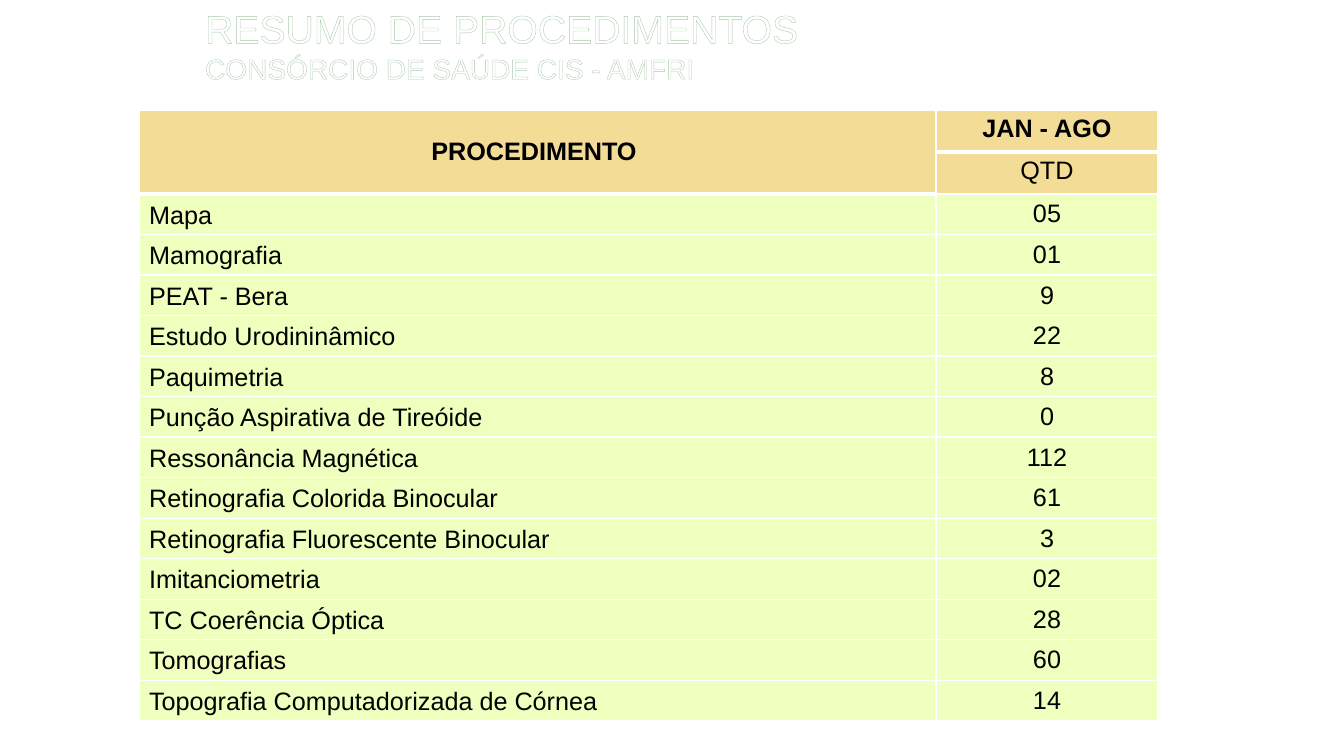
from dataclasses import dataclass

from pptx import Presentation
from pptx.dml.color import RGBColor
from pptx.enum.text import MSO_ANCHOR as Anchor, MSO_AUTO_SIZE as AutoSize, PP_ALIGN as Align
from pptx.oxml import parse_xml
from pptx.oxml.ns import nsdecls
from pptx.util import Emu, Pt

EMU_PER_PX = 914400 / 100.8


def px(length):
    return Emu(round(length * EMU_PER_PX))


@dataclass(frozen=True)
class Theme:
    font: str = "Arial"
    white: str = "FFFFFF"
    ink: str = "000000"
    title_outline: str = "AACAAA"
    header_fill: str = "F3DC96"
    body_fill: str = "EEFFBE"
    title_size: int = 28
    subtitle_size: int = 20
    table_size: int = 18
    outline_width: float = 0.8
    thin_border: int = 1
    thick_border: int = 3


PROCEDURES = [
    ("Mapa", "05"),
    ("Mamografia", "01"),
    ("PEAT - Bera", "9"),
    ("Estudo Urodininâmico", "22"),
    ("Paquimetria", "8"),
    ("Punção Aspirativa de Tireóide", "0"),
    ("Ressonância Magnética", "112"),
    ("Retinografia Colorida Binocular", "61"),
    ("Retinografia Fluorescente Binocular", "3"),
    ("Imitanciometria", "02"),
    ("TC Coerência Óptica", "28"),
    ("Tomografias", "60"),
    ("Topografia Computadorizada de Córnea", "14"),
]


class SlideBuilder:
    def __init__(self, page, theme):
        self.page = page
        self.theme = theme

    def line_xml(self, tag, color, width):
        return parse_xml(
            f'<a:{tag} {nsdecls("a")} w="{Pt(width)}"><a:solidFill>'
            f'<a:srgbClr val="{color}"/></a:solidFill></a:{tag}>'
        )

    def add_span(self, para, text, size, color, bold=False):
        span = para.add_run()
        span.text = text
        span.font.name = self.theme.font
        span.font.size = Pt(size)
        span.font.bold = bold
        span.font.color.rgb = RGBColor.from_string(color)
        return span

    def title(self, left, top, width, height, lines):
        """Fill the title placeholder with outlined (text, size) lines."""
        theme = self.theme
        box = self.page.shapes.title
        box.left, box.top, box.width, box.height = map(px, (left, top, width, height))
        frame = box.text_frame
        frame.word_wrap = True
        frame.auto_size = AutoSize.NONE
        frame.vertical_anchor = Anchor.MIDDLE
        para = frame.paragraphs[0]
        para.alignment = Align.LEFT
        for index, (text, size) in enumerate(lines):
            if index:
                para.add_line_break()
            span = self.add_span(para, text, size, theme.white)
            outline = self.line_xml("ln", theme.title_outline, theme.outline_width)
            span.font._element.insert(0, outline)

    def cell(self, cell, text, fill, align, anchor, bold=False, bottom=None):
        theme = self.theme
        properties = cell._tc.get_or_add_tcPr()
        for tag in ("lnL", "lnR", "lnT", "lnB"):
            width = bottom if bottom and tag == "lnB" else theme.thin_border
            properties.append(self.line_xml(tag, theme.white, width))
        cell.fill.solid()
        cell.fill.fore_color.rgb = RGBColor.from_string(fill)
        cell.vertical_anchor = anchor
        para = cell.text_frame.paragraphs[0]
        para.alignment = align
        if text:
            self.add_span(para, text, theme.table_size, theme.ink, bold)

    def procedure_table(self, left, top, columns, header_height, body_height, rows):
        theme = self.theme
        height = 2 * header_height + body_height
        frame = self.page.shapes.add_table(
            len(rows) + 2, len(columns), px(left), px(top), px(sum(columns)), px(height)
        )
        table = frame.table
        table.first_row = table.horz_banding = False
        for column, width in zip(table.columns, columns):
            column.width = px(width)
        for index, row in enumerate(table.rows):
            row.height = px(header_height if index < 2 else body_height / len(rows))

        thick = theme.thick_border
        headers = [
            (0, 0, "PROCEDIMENTO ", Anchor.MIDDLE, True, thick),
            (1, 0, "", Anchor.MIDDLE, False, thick),
            (0, 1, "JAN - AGO", Anchor.TOP, True, thick),
            (1, 1, "QTD", Anchor.TOP, False, None),
        ]
        for row, column, text, anchor, bold, bottom in headers:
            self.cell(table.cell(row, column), text, theme.header_fill,
                      Align.CENTER, anchor, bold, bottom)
        table.cell(0, 0).merge(table.cell(1, 0))

        for index, (procedure, quantity) in enumerate(rows, start=2):
            self.cell(table.cell(index, 0), procedure, theme.body_fill, Align.LEFT, Anchor.BOTTOM)
            self.cell(table.cell(index, 1), quantity, theme.body_fill, Align.CENTER, Anchor.MIDDLE)


def main():
    deck = Presentation()
    deck.slide_width, deck.slide_height = px(1344), px(756)
    theme = Theme()
    title_only = deck.slide_layouts[5]
    builder = SlideBuilder(deck.slides.add_slide(title_only), theme)
    builder.title(195, 12, 985, 65, [
        ("RESUMO DE PROCEDIMENTOS", theme.title_size),
        ("CONSÓRCIO DE SAÚDE CIS - AMFRI", theme.subtitle_size),
    ])
    builder.procedure_table(139, 110, (797, 222), 42, 527, PROCEDURES)
    deck.save("out.pptx")


if __name__ == "__main__":
    main()
